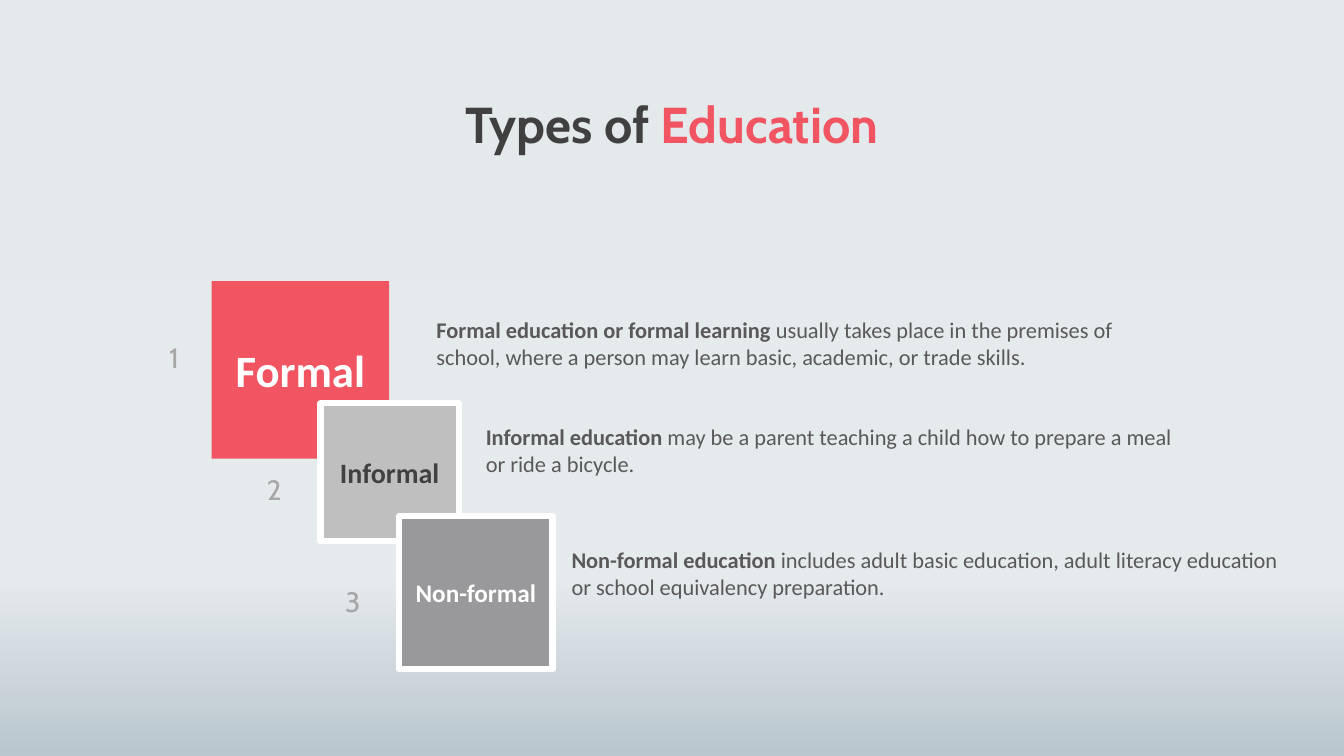
from dataclasses import dataclass
from typing import Optional

from lxml.etree import SubElement
from pptx import Presentation
from pptx.dml.color import RGBColor
from pptx.enum.shapes import MSO_SHAPE
from pptx.enum.text import MSO_ANCHOR, MSO_AUTO_SIZE, PP_ALIGN
from pptx.oxml.ns import qn
from pptx.slide import Slide
from pptx.util import Pt

EMU_PER_PX = 9144  # 100 px to the inch
SLIDE_SIZE = (1333, 750)
TITLE_ONLY_LAYOUT = 5


@dataclass(frozen=True)
class Theme:
    heading_font: str = "Cabin"
    body_font: str = "Calibri"
    accent: str = "F15562"
    light_gray: str = "BFBFBF"
    mid_gray: str = "99999B"
    white: str = "FFFFFF"
    dark: str = "404040"
    body: str = "595959"
    number: str = "A6A6A6"
    title_size: int = 36
    body_size: int = 16
    number_size: int = 20
    border_width: float = 4.5
    background: tuple[tuple[int, str], ...] = (
        (0, "E4E9EC"), (37, "E5EAED"), (77, "E4E9EC"), (100, "B9C6CE"))


THEME = Theme()


@dataclass(frozen=True)
class Box:
    left: int
    top: int
    width: int
    height: int


@dataclass(frozen=True)
class EducationType:
    name: str
    tile: Box
    fill: str
    name_color: str
    name_size: int
    border: Optional[str]
    number_box: Box
    term: str
    explanation: str
    text_box: Box


EDUCATION_TYPES = (
    EducationType(
        "Formal", Box(210, 279, 176, 176), THEME.accent, THEME.white, 32, None,
        Box(158, 333, 29, 44),
        "Formal education or formal learning",
        " usually takes place in the premises of school, where a person "
        "may learn basic, academic, or trade skills.",
        Box(423, 309, 716, 64)),
    EducationType(
        "Informal", Box(318, 400, 137, 137), THEME.light_gray, THEME.dark, 20, THEME.white,
        Box(254, 464, 36, 44),
        "Informal education",
        " may be a parent teaching a child how to prepare a meal or ride a bicycle.",
        Box(472, 415, 716, 64)),
    EducationType(
        "Non-formal", Box(396, 512, 152, 152), THEME.mid_gray, THEME.white, 18, THEME.white,
        Box(332, 575, 36, 44),
        "Non-formal education",
        " includes adult basic education, adult literacy education "
        "or school equivalency preparation.",
        Box(557, 537, 732, 64)),
)


def px(length: int) -> int:
    return length * EMU_PER_PX


def edges(box: Box) -> tuple[int, int, int, int]:
    """Return left, top, width and height in EMU."""
    return px(box.left), px(box.top), px(box.width), px(box.height)


def rgb(color: str) -> RGBColor:
    return RGBColor.from_string(color)


def style_font(font, name: str, size: int, color: str, bold: bool = False) -> None:
    font.name = name
    font.size = Pt(size)
    font.bold = bold
    font.color.rgb = rgb(color)


def paint_background(slide: Slide) -> None:
    fill = slide.background.fill
    fill.gradient()
    fill.gradient_angle = 270  # counter-clockwise, so top to bottom
    stops = slide.element.find(".//" + qn("a:gsLst"))
    stops.clear()
    for percent, color in THEME.background:
        stop = SubElement(stops, qn("a:gs"), pos=str(percent * 1000))
        SubElement(stop, qn("a:srgbClr"), val=color)


def add_title(slide: Slide) -> None:
    title = slide.shapes.title
    title.left, title.top, title.width, title.height = edges(Box(410, 87, 513, 71))
    frame = title.text_frame
    frame.auto_size = MSO_AUTO_SIZE.NONE
    frame.vertical_anchor = MSO_ANCHOR.TOP
    paragraph = frame.paragraphs[0]
    paragraph.alignment = PP_ALIGN.CENTER
    for text, color in (("Types of ", THEME.dark), ("Education", THEME.accent)):
        run = paragraph.add_run()
        run.text = text
        style_font(run.font, THEME.heading_font, THEME.title_size, color, bold=True)


def add_tile(slide: Slide, kind: EducationType) -> None:
    shape = slide.shapes.add_shape(MSO_SHAPE.RECTANGLE, *edges(kind.tile))
    shape.shadow.inherit = False
    shape.fill.solid()
    shape.fill.fore_color.rgb = rgb(kind.fill)
    if kind.border:
        shape.line.color.rgb = rgb(kind.border)
        shape.line.width = Pt(THEME.border_width)
    else:
        shape.line.fill.background()
    frame = shape.text_frame
    frame.text = kind.name
    frame.vertical_anchor = MSO_ANCHOR.MIDDLE
    paragraph = frame.paragraphs[0]
    paragraph.alignment = PP_ALIGN.CENTER
    style_font(paragraph.font, THEME.body_font, kind.name_size, kind.name_color, bold=True)


def add_description(slide: Slide, kind: EducationType) -> None:
    frame = slide.shapes.add_textbox(*edges(kind.text_box)).text_frame
    frame.word_wrap = True
    paragraph = frame.paragraphs[0]
    style_font(paragraph.font, THEME.body_font, THEME.body_size, THEME.body)
    for text, bold in ((kind.term, True), (kind.explanation, False)):
        run = paragraph.add_run()
        run.text = text
        run.font.bold = bold


def add_number(slide: Slide, number: int, box: Box) -> None:
    frame = slide.shapes.add_textbox(*edges(box)).text_frame
    frame.word_wrap = False
    frame.text = str(number)
    paragraph = frame.paragraphs[0]
    paragraph.alignment = PP_ALIGN.CENTER
    style_font(paragraph.font, THEME.heading_font, THEME.number_size, THEME.number)


def main() -> None:
    presentation = Presentation()
    presentation.slide_width, presentation.slide_height = map(px, SLIDE_SIZE)
    slide = presentation.slides.add_slide(presentation.slide_layouts[TITLE_ONLY_LAYOUT])
    paint_background(slide)
    add_title(slide)
    for number, kind in enumerate(EDUCATION_TYPES, start=1):
        add_tile(slide, kind)
        add_description(slide, kind)
        add_number(slide, number, kind.number_box)
    presentation.save("out.pptx")


if __name__ == "__main__":
    main()
